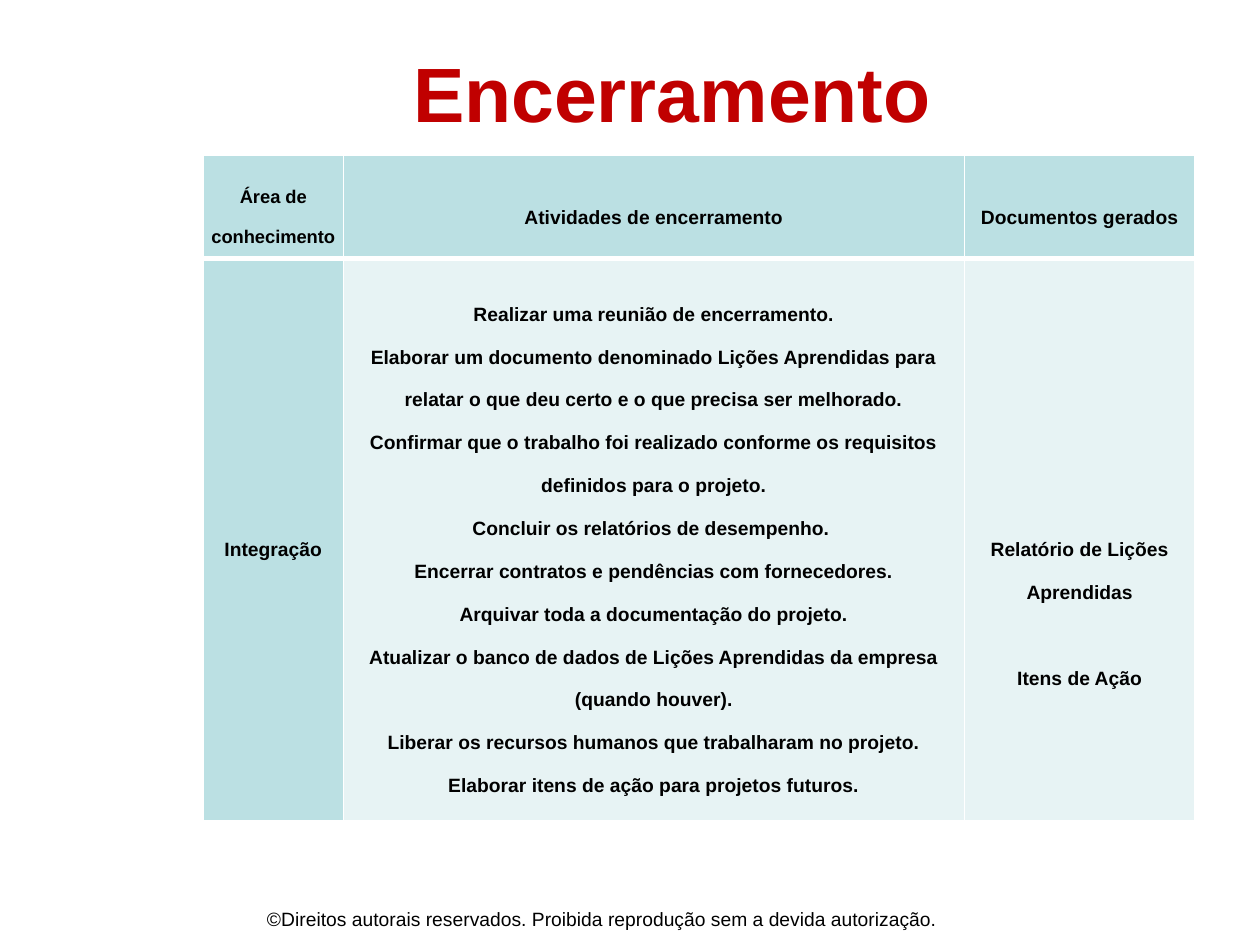
from lxml import etree
from pptx import Presentation
from pptx.dml.color import RGBColor
from pptx.enum import text
from pptx.oxml import ns
from pptx.util import Cm, Pt

COLORS = {"title": "C00000", "text": "000000", "head": "BBE0E3",
          "body": "E7F3F4", "border": "FFFFFF"}
TITLE = "Encerramento"
FOOTER = "©Direitos autorais reservados. Proibida reprodução sem a devida autorização."
ROWS = [
    [["Área de", "conhecimento"], ["Atividades de encerramento"], ["Documentos gerados"]],
    [
        ["Integração"],
        [
            "Realizar uma reunião de encerramento.",
            "Elaborar um documento denominado Lições Aprendidas para relatar o que deu certo e o que precisa ser melhorado.",
            "Confirmar que o trabalho foi realizado conforme os requisitos definidos para o projeto.",
            "Concluir os relatórios de desempenho. ",
            "Encerrar contratos e pendências com fornecedores.",
            "Arquivar toda a documentação do projeto.",
            "Atualizar o banco de dados de Lições Aprendidas da empresa (quando houver).",
            "Liberar os recursos humanos que trabalharam no projeto.",
            "Elaborar itens de ação para projetos futuros.",
        ],
        ["Relatório de Lições Aprendidas", "Itens de Ação"],
    ],
]
COLUMN_WIDTHS = [2.82, 12.52, 4.65]
ROW_HEIGHTS = [2.08, 11.33]
LINE_PITCH = 24.5


def write(frame, lines, size, color="text", bold=True, spacing=None):
    frame.text = "\n".join(lines)
    frame.word_wrap = True
    for paragraph in frame.paragraphs:
        paragraph.alignment = text.PP_ALIGN.CENTER
        if spacing:
            paragraph.line_spacing = spacing
        for span in paragraph.runs:
            span.font.name = "Arial"
            span.font.size = Pt(size)
            span.font.bold = bold
            span.font.color.rgb = RGBColor.from_string(COLORS[color])


def add_borders(cell, widths):
    properties = cell._tc.get_or_add_tcPr()
    for index, (side, width) in enumerate(widths.items()):
        line = etree.Element(ns.qn("a:ln" + side), w=str(Pt(width)))
        fill = etree.SubElement(line, ns.qn("a:solidFill"))
        etree.SubElement(fill, ns.qn("a:srgbClr"), val=COLORS["border"])
        properties.insert(index, line)


def add_activity_table(page):
    table = page.shapes.add_table(
        len(ROWS), len(COLUMN_WIDTHS), Cm(4.1), Cm(3.13),
        Cm(sum(COLUMN_WIDTHS)), Cm(sum(ROW_HEIGHTS))).table
    for column, width in zip(table.columns, COLUMN_WIDTHS):
        column.width = Cm(width)
    for row, height in zip(table.rows, ROW_HEIGHTS):
        row.height = Cm(height)

    for r, row in enumerate(ROWS):
        for c, lines in enumerate(row):
            cell = table.cell(r, c)
            cell.vertical_anchor = text.MSO_ANCHOR.MIDDLE
            cell.margin_left = cell.margin_right = Cm(0.13)
            cell.margin_top = cell.margin_bottom = 0
            cell.fill.solid()
            shade = "head" if r == 0 or c == 0 else "body"
            cell.fill.fore_color.rgb = RGBColor.from_string(COLORS[shade])
            write(cell.text_frame, lines, 10.5 if r == c == 0 else 11, spacing=2.0)
            add_borders(cell, {"L": 1, "R": 1, "T": 3 if r else 1, "B": 1 if r else 3})

    documents = table.cell(1, 2)
    documents.margin_top = Pt(3 * LINE_PITCH)
    documents.text_frame.paragraphs[1].space_before = Pt(LINE_PITCH)


def main():
    deck = Presentation()
    deck.slide_width, deck.slide_height = Cm(25.4), Cm(19.05)
    page = deck.slides.add_slide(deck.slide_layouts[5])

    title = page.shapes.title
    title.left, title.top, title.width, title.height = Cm(2.97), Cm(0.76), Cm(21.16), Cm(2.16)
    title.text_frame.vertical_anchor = text.MSO_ANCHOR.MIDDLE
    write(title.text_frame, [TITLE], 44, "title")

    footer = page.shapes.add_textbox(Cm(2.49), Cm(17.73), Cm(19.3), Cm(1.32))
    footer.text_frame.margin_top = Cm(0.57)
    write(footer.text_frame, [FOOTER], 11, bold=False)

    add_activity_table(page)
    deck.save("out.pptx")


if __name__ == "__main__":
    main()
